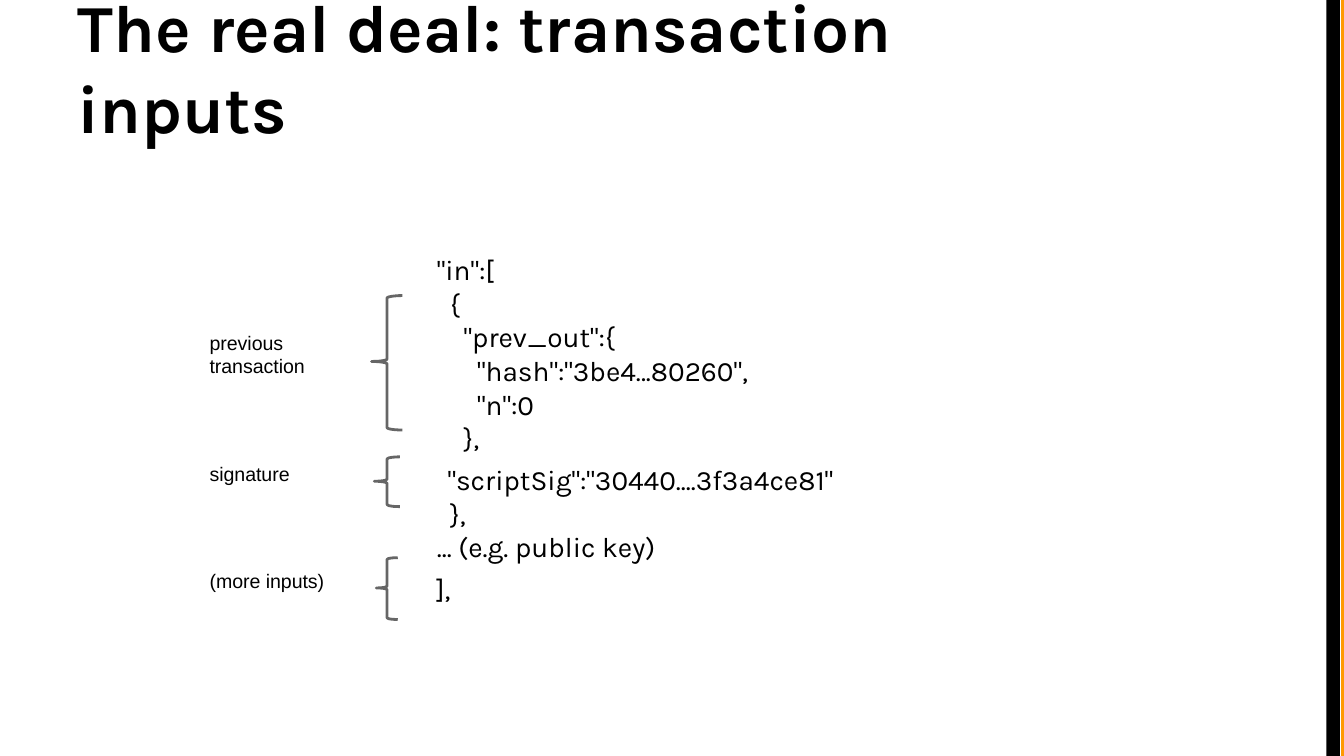
from pptx import Presentation
from pptx.dml.color import RGBColor
from pptx.enum.shapes import MSO_SHAPE
from pptx.enum.text import MSO_ANCHOR
from pptx.util import Inches, Pt

BLACK = RGBColor(0x00, 0x00, 0x00)
ORANGE = RGBColor(0xFF, 0x99, 0x00)
GRAY = RGBColor(0x66, 0x66, 0x66)

WIDTH = 10
HEIGHT = WIDTH * 9 / 16
INSET = 0.08
BAR_WIDTH = 0.1
LABEL_LEFT = 1.48
BRACE_CENTER = 2.88
INDENT_BASE, INDENT_STEP = 0.29, 0.1
GROUP_GAP = 4.5

TITLE_FONT = {"name": "Karla", "size": Pt(36), "bold": True}
CODE_FONT = {"name": "Karla", "size": Pt(15)}
LABEL_FONT = {"name": "Arial", "size": Pt(10.5)}

TITLE = "The real deal: transaction inputs"
TITLE_AREA = (0.5, 0.23, 7.8, 0.94)
CODE_AREA = (2.88, 1.8, 6.75, 4.51)
CODE_GROUPS = [
    [(0, '"in":['), (1, "{"), (2, '"prev_out":{'),
     (3, '"hash":"3be4...80260",'), (3, '"n":0'), (2, "},")],
    [(0.8, '"scriptSig":"30440....3f3a4ce81"'), (1, "},"),
     (0, "... (e.g. public key)")],
    [(0, "],")],
]
BARS = [(9.98, ORANGE), (9.87, BLACK)]
BRACES = [(2.2, 0.23, 1), (3.4, 0.19, 0.37), (4.15, 0.16, 0.46)]
LABELS = [
    (["signature"], 3.36, 0.96, 0.46),
    (["previous", "transaction"], 2.38, 0.96, 0.63),
    (["(more inputs)"], 4.15, 1.09, 0.57),
]


def add_text(page, area, lines, font, anchor=MSO_ANCHOR.TOP):
    box = page.shapes.add_textbox(*map(Inches, area))
    frame = box.text_frame
    frame.word_wrap = True
    frame.vertical_anchor = anchor
    for side in ("left", "top", "right", "bottom"):
        setattr(frame, f"margin_{side}", Inches(INSET))
    for number, (text, indent, gap) in enumerate(lines):
        para = frame.add_paragraph() if number else frame.paragraphs[0]
        para.space_before = Pt(gap)
        para._p.get_or_add_pPr().set("marL", str(Inches(indent)))
        span = para.add_run()
        span.text = text
        span.font.color.rgb = BLACK
        for name, value in font.items():
            setattr(span.font, name, value)


def add_bar(page, left, color):
    bar = page.shapes.add_shape(
        MSO_SHAPE.RECTANGLE, *map(Inches, (left, 0, BAR_WIDTH, HEIGHT)))
    bar.shadow.inherit = False
    bar.fill.solid()
    bar.fill.fore_color.rgb = color
    bar.line.fill.background()


def add_brace(page, top, width, height):
    area = (BRACE_CENTER - width / 2, top, width, height)
    brace = page.shapes.add_shape(MSO_SHAPE.LEFT_BRACE, *map(Inches, area))
    brace.shadow.inherit = False
    brace.fill.background()
    brace.line.color.rgb = GRAY
    brace.line.width = Pt(1.5)
    brace.adjustments[0] = 0.08
    brace.adjustments[1] = 0.49


def code_lines():
    return [
        (text, INDENT_BASE + level * INDENT_STEP, 0 if row else GROUP_GAP)
        for group in CODE_GROUPS
        for row, (level, text) in enumerate(group)
    ]


def main():
    deck = Presentation()
    deck.slide_width, deck.slide_height = Inches(WIDTH), Inches(HEIGHT)
    page = deck.slides.add_slide(deck.slide_layouts[6])
    for left, color in BARS:
        add_bar(page, left, color)
    add_text(page, TITLE_AREA, [(TITLE, 0, 0)], TITLE_FONT, MSO_ANCHOR.BOTTOM)
    add_text(page, CODE_AREA, code_lines(), CODE_FONT)
    for top, width, height in BRACES:
        add_brace(page, top, width, height)
    for words, top, width, height in LABELS:
        add_text(page, (LABEL_LEFT, top, width, height),
                 [(word, 0, 0) for word in words], LABEL_FONT)
    deck.save("out.pptx")


if __name__ == "__main__":
    main()
